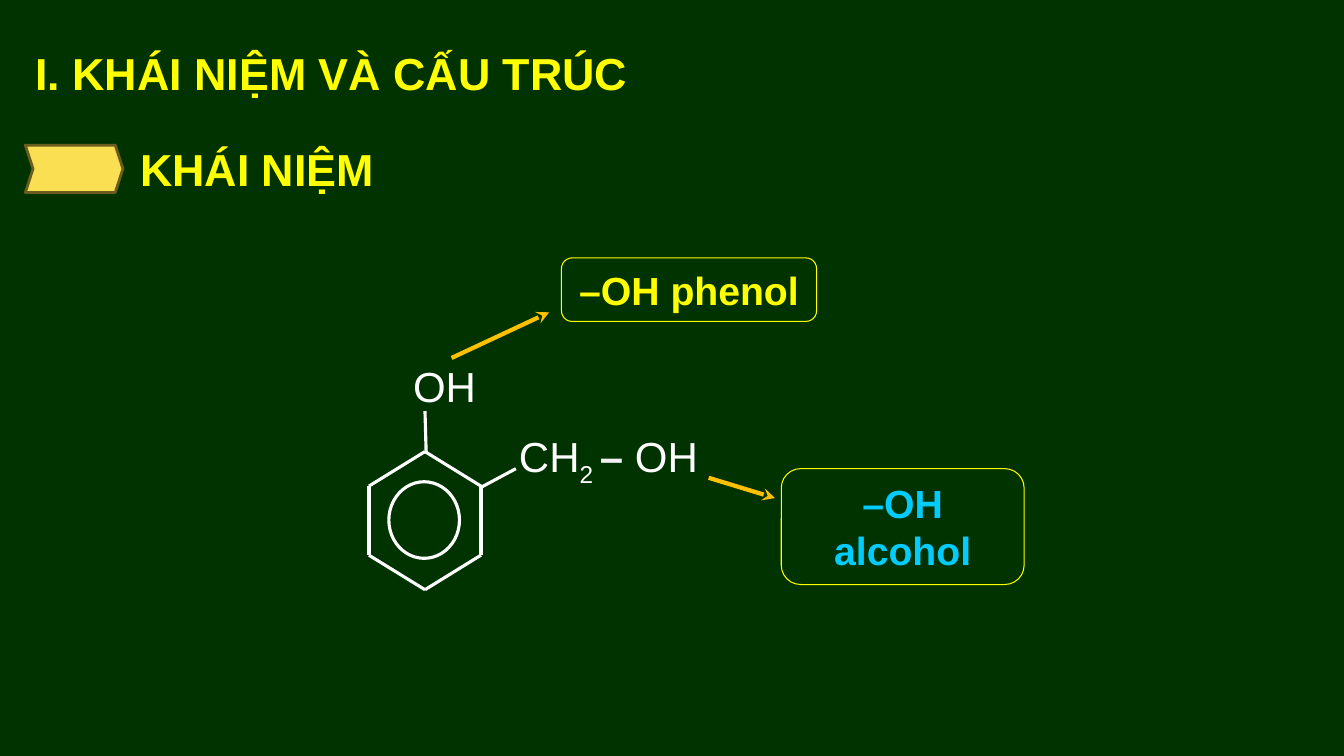
from math import cos, pi, sin

from pptx import Presentation
from pptx.dml.color import RGBColor
from pptx.enum.shapes import MSO_CONNECTOR, MSO_SHAPE as Shape
from pptx.enum.text import MSO_ANCHOR as Anchor, MSO_AUTO_SIZE as AutoSize, PP_ALIGN as Align
from pptx.oxml.ns import qn
from pptx.oxml.xmlchemy import OxmlElement
from pptx.util import Cm, Pt

COLORS = {
    "board": "003300", "chalk": "FFFFFF", "dash": "F2F2F2", "yellow": "FFFF00",
    "cyan": "00CCFF", "orange": "FFC000", "gold": "FBDF53", "brown": "6A5D1E",
}
FONT = "Arial"
PADDING = (0.25, 0.13)


def rgb(name):
    return RGBColor.from_string(COLORS[name])


class Board:
    def __init__(self, deck):
        self.slide = deck.slides.add_slide(deck.slide_layouts[5])
        self.slide.background.fill.solid()
        self.slide.background.fill.fore_color.rgb = rgb("board")

    def lettering(self, frame, runs, size, align=Align.LEFT, anchor=Anchor.TOP, padding=PADDING):
        across, down = (Cm(value) for value in padding)
        layout = {
            "word_wrap": True, "auto_size": AutoSize.NONE, "vertical_anchor": anchor,
            "margin_left": across, "margin_right": across,
            "margin_top": down, "margin_bottom": down,
        }
        for key, value in layout.items():
            setattr(frame, key, value)
        paragraph = frame.paragraphs[0]
        paragraph.alignment = align
        for words, color, bold, baseline in runs:
            run = paragraph.add_run()
            run.text = words
            for key, value in {"name": FONT, "size": Pt(size), "bold": bold}.items():
                setattr(run.font, key, value)
            run.font.color.rgb = rgb(color)
            if baseline:
                run.font._element.set("baseline", str(baseline * 1000))

    def title(self, words, *box):
        heading = self.slide.shapes.title
        for key, value in zip(("left", "top", "width", "height"), box):
            setattr(heading, key, Cm(value))
        self.lettering(heading.text_frame, [(words, "yellow", True, 0)], 32)

    def text(self, runs, size, *box, padding=PADDING):
        label = self.slide.shapes.add_textbox(*map(Cm, box))
        self.lettering(label.text_frame, runs, size, padding=padding)

    def shape(self, kind, outline, weight, *box, fill=None, adjust=None):
        figure = self.slide.shapes.add_shape(kind, *map(Cm, box))
        figure.shadow.inherit = False
        if fill:
            figure.fill.solid()
            figure.fill.fore_color.rgb = rgb(fill)
        else:
            figure.fill.background()
        figure.line.color.rgb = rgb(outline)
        figure.line.width = Pt(weight)
        if adjust is not None:
            figure.adjustments[0] = adjust
        return figure

    def callout(self, words, color, *box):
        frame = self.shape(Shape.ROUNDED_RECTANGLE, "yellow", 0.75, *box, adjust=0.167).text_frame
        self.lettering(frame, [(words, color, True, 0)], 28, Align.CENTER, Anchor.MIDDLE)

    def line(self, start, end, color="chalk", weight=2.25, arrow=False):
        stroke = self.slide.shapes.add_connector(
            MSO_CONNECTOR.STRAIGHT, *map(Cm, (*start, *end)))
        stroke.line.color.rgb = rgb(color)
        stroke.line.width = Pt(weight)
        properties = stroke._element.spPr
        if arrow:
            head = OxmlElement("a:tailEnd")
            head.set("type", "stealth")
            properties.find(qn("a:ln")).append(head)
        properties.append(OxmlElement("a:effectLst"))


def draw_molecule(board):
    center_x, center_y = 10.71, 13.12
    radius_x, radius_y = 1.63, 1.74
    corners = [
        (center_x + radius_x * sin(step * pi / 3), center_y - radius_y * cos(step * pi / 3))
        for step in range(6)
    ]
    for corner, following in zip(corners, corners[1:] + corners[:1]):
        board.line(corner, following)
    board.shape(Shape.OVAL, "chalk", 2.25, 9.8, 12.14, 1.78, 1.93)
    board.line((10.71, 10.36), (10.74, 11.43))
    board.line((13, 11.81), (12.14, 12.27))
    board.text([("OH", "chalk", False, 0)], 30, 10.41, 9.09, 1.6, 1.3, padding=(0, 0))
    alcohol_group = [
        ("CH", "chalk", False, 0), ("2 ", "chalk", False, -25),
        ("–", "dash", True, 0), (" OH", "chalk", False, 0),
    ]
    board.text(alcohol_group, 30, 13.08, 10.85, 4.62, 1.3, padding=(0, 0))


def main():
    deck = Presentation()
    deck.slide_width, deck.slide_height = Cm(33.87), Cm(19.05)
    board = Board(deck)
    board.title("I. KHÁI NIỆM VÀ CẤU TRÚC", 0.64, 1.02, 15.47, 1.63)
    board.shape(Shape.CHEVRON, "brown", 2, 0.64, 3.66, 2.46, 1.19, fill="gold", adjust=0.163)
    board.text([("KHÁI NIỆM", "yellow", True, 0)], 32, 3.28, 3.45, 6.48, 1.63)
    draw_molecule(board)
    board.callout("–OH phenol", "yellow", 14.15, 6.5, 6.43, 1.6)
    board.callout("–OH alcohol", "cyan", 19.69, 11.81, 6.12, 2.92)
    for start, end in (((11.38, 9.02), (13.84, 7.87)), ((17.86, 12.04), (19.53, 12.55))):
        board.line(start, end, "orange", 3, arrow=True)
    deck.save("out.pptx")


if __name__ == "__main__":
    main()
